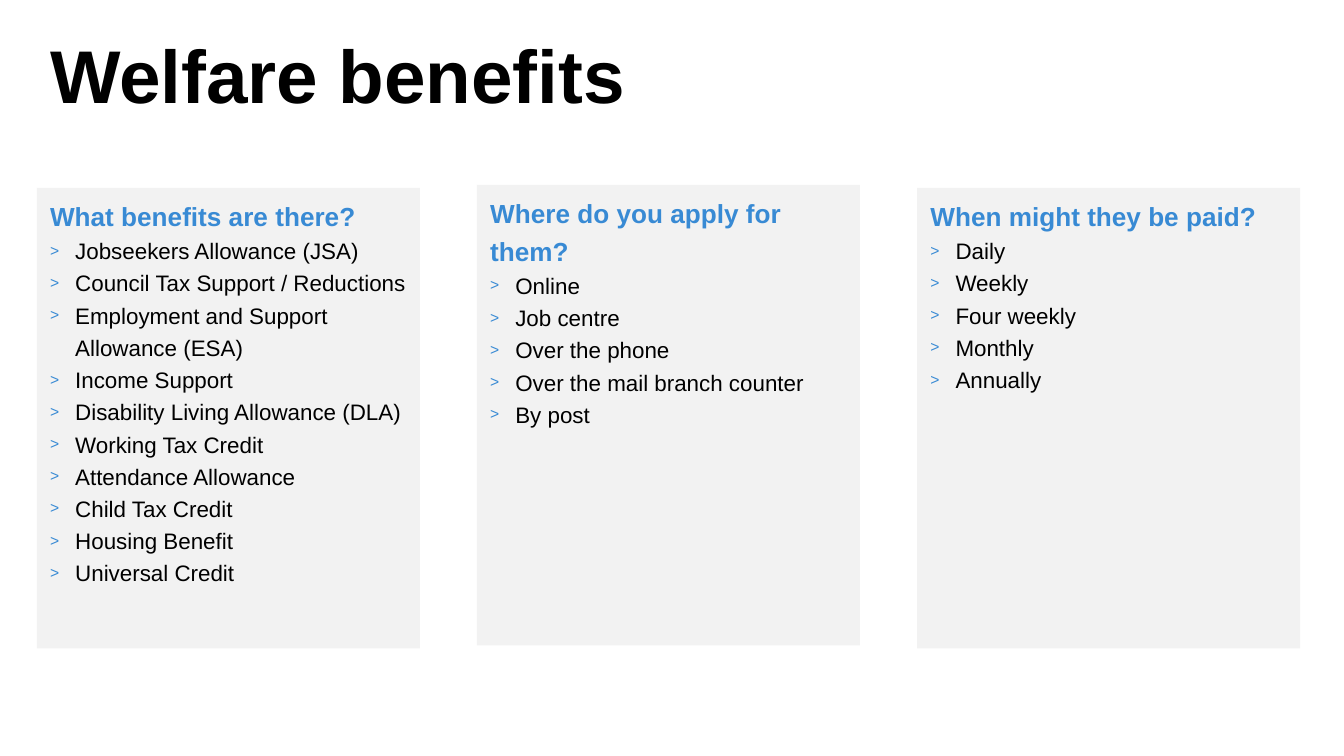
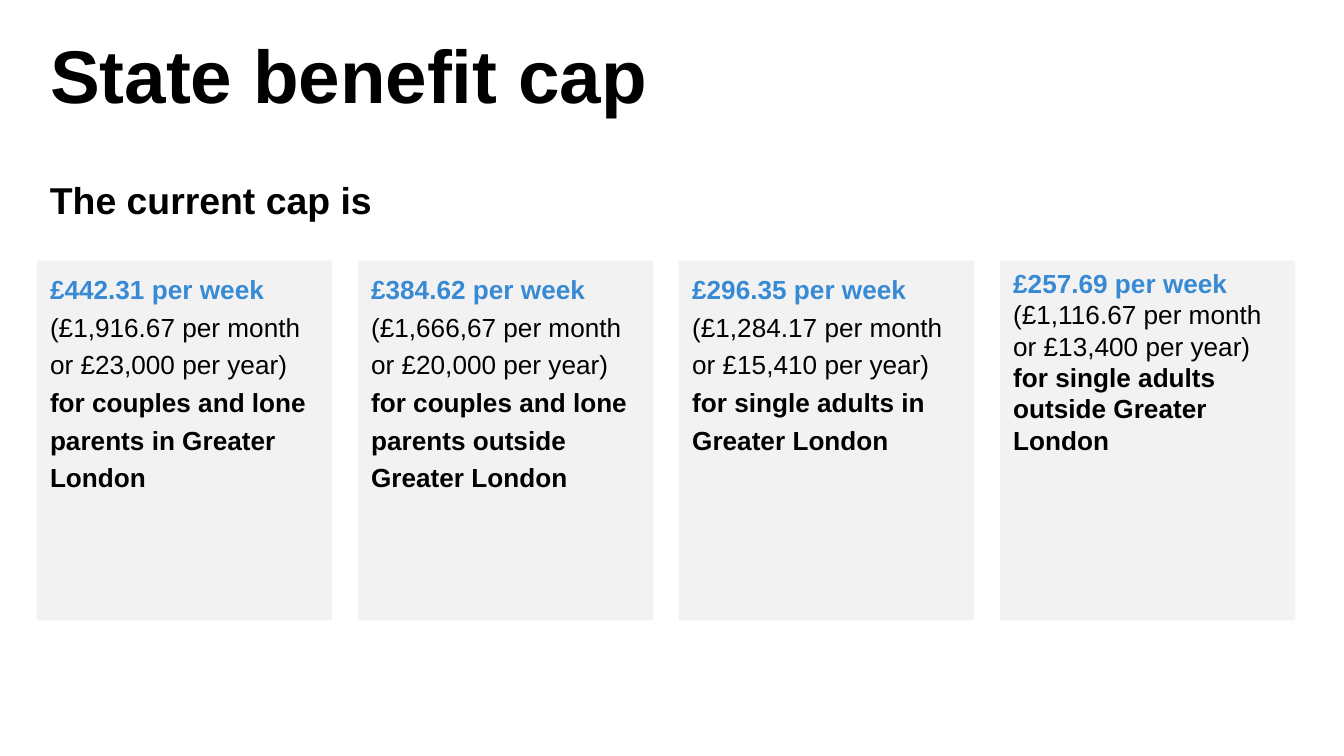
from lxml import etree
from pptx import Presentation
from pptx.dml.color import RGBColor
from pptx.enum.shapes import MSO_SHAPE
from pptx.enum.text import MSO_ANCHOR, PP_ALIGN
from pptx.oxml.ns import qn
from pptx.util import Pt

RECT = MSO_SHAPE.RECTANGLE
TOP = MSO_ANCHOR.TOP
LEFT = PP_ALIGN.LEFT

FONT = "Arial"
BLACK, BLUE, GREY = "000000", "388AD4", "F2F2F2"
EDGE = 19.7
INDENT = 13.5

TOPICS = [
    ("What benefits are there?", [
        "Jobseekers Allowance (JSA)",
        "Council Tax Support / Reductions",
        "Employment and Support Allowance (ESA)",
        "Income Support",
        "Disability Living Allowance (DLA)",
        "Working Tax Credit",
        "Attendance Allowance",
        "Child Tax Credit",
        "Housing Benefit",
        "Universal Credit",
    ]),
    ("Where do you apply for them?", [
        "Online",
        "Job centre",
        "Over the phone",
        "Over the mail branch counter",
        "By post",
    ]),
    ("When might they be paid?", [
        "Daily",
        "Weekly",
        "Four weekly",
        "Monthly",
        "Annually",
    ]),
]

LOOSE = {"line": 1.2}
CAPS = [
    ("£442.31", "£1,916.67", "£23,000",
     "couples and lone parents in Greater London", LOOSE),
    ("£384.62", "£1,666,67", "£20,000",
     "couples and lone parents outside Greater London", LOOSE),
    ("£296.35", "£1,284.17", "£15,410",
     "single adults in Greater London", LOOSE),
    ("£257.69", "£1,116.67", "£13,400",
     "single adults outside Greater London", {"before": 18}),
]


def tint(code):
    return RGBColor.from_string(code)


def add_run(para, text, size=14, color=BLACK, bold=False):
    run = para.add_run()
    run.text = text
    font = run.font
    font.name, font.size, font.bold = FONT, Pt(size), bold
    font.color.rgb = tint(color)


def add_para(frame, line=None, before=None):
    """Use the empty first paragraph, or append one."""
    para = frame.paragraphs[0]
    if para.runs:
        para = frame.add_paragraph()
    para.alignment = LEFT
    if line:
        para.line_spacing = line
    if before:
        para.space_before = Pt(before)
    return para


def add_mark(para):
    """Give the paragraph a small blue angle as its bullet."""
    props = para._p.get_or_add_pPr()
    props.set("marL", str(Pt(INDENT)))
    props.set("indent", str(-Pt(INDENT)))
    color = etree.SubElement(props, qn("a:buClr"))
    etree.SubElement(color, qn("a:srgbClr"), val=BLUE)
    etree.SubElement(props, qn("a:buSzPct"), val="70000")
    etree.SubElement(props, qn("a:buFont"), typeface=FONT)
    etree.SubElement(props, qn("a:buChar"), char=">")


def set_frame(shape):
    frame = shape.text_frame
    frame.word_wrap = True
    frame.vertical_anchor = TOP
    return frame


def add_label(slide, text, box, size, **space):
    shape = slide.shapes.add_textbox(*map(Pt, box))
    para = add_para(set_frame(shape), **space)
    add_run(para, text, size=size, bold=True)


def add_title(slide, text, high):
    add_label(slide, text, (EDGE, 17.3, 685.5, high), 40, line=0.9)


def add_card(slide, box):
    card = slide.shapes.add_shape(RECT, *map(Pt, box))
    card.shadow.inherit = False
    card.fill.solid()
    card.fill.fore_color.rgb = tint(GREY)
    card.line.fill.background()
    return set_frame(card)


def add_topic(slide, box, head, items):
    frame = add_card(slide, box)
    add_run(add_para(frame, **LOOSE), head, color=BLUE, bold=True)
    for item in items:
        para = add_para(frame, **LOOSE)
        add_mark(para)
        add_run(para, item, size=12)


def add_cap(slide, box, week, month, year, group, space):
    para = add_para(add_card(slide, box), **space)
    add_run(para, f"{week} per week ", color=BLUE, bold=True)
    add_run(para, f"({month} per month or {year} per year) ")
    add_run(para, f"for {group}", bold=True)


def topic_slide(slide):
    add_title(slide, "Welfare benefits", 145.5)
    for i, (head, items) in enumerate(TOPICS):
        top = 99 if i == 1 else 100.6
        add_topic(slide, (EDGE + i * 235.8, top, 205.2, 246.8), head, items)


def cap_slide(slide):
    add_title(slide, "State benefit cap", 58.3)
    add_label(slide, "The current cap is", (EDGE, 91.6, 643.7, 48.2), 20,
              before=6)
    for i, cap in enumerate(CAPS):
        add_cap(slide, (EDGE + i * 172, 139.7, 158.2, 192.7), *cap)


def main():
    deck = Presentation()
    deck.slide_width, deck.slide_height = Pt(720), Pt(405)
    blank = deck.slide_layouts[6]
    for build in (topic_slide, cap_slide):
        build(deck.slides.add_slide(blank))
    deck.save("out.pptx")


if __name__ == "__main__":
    main()
